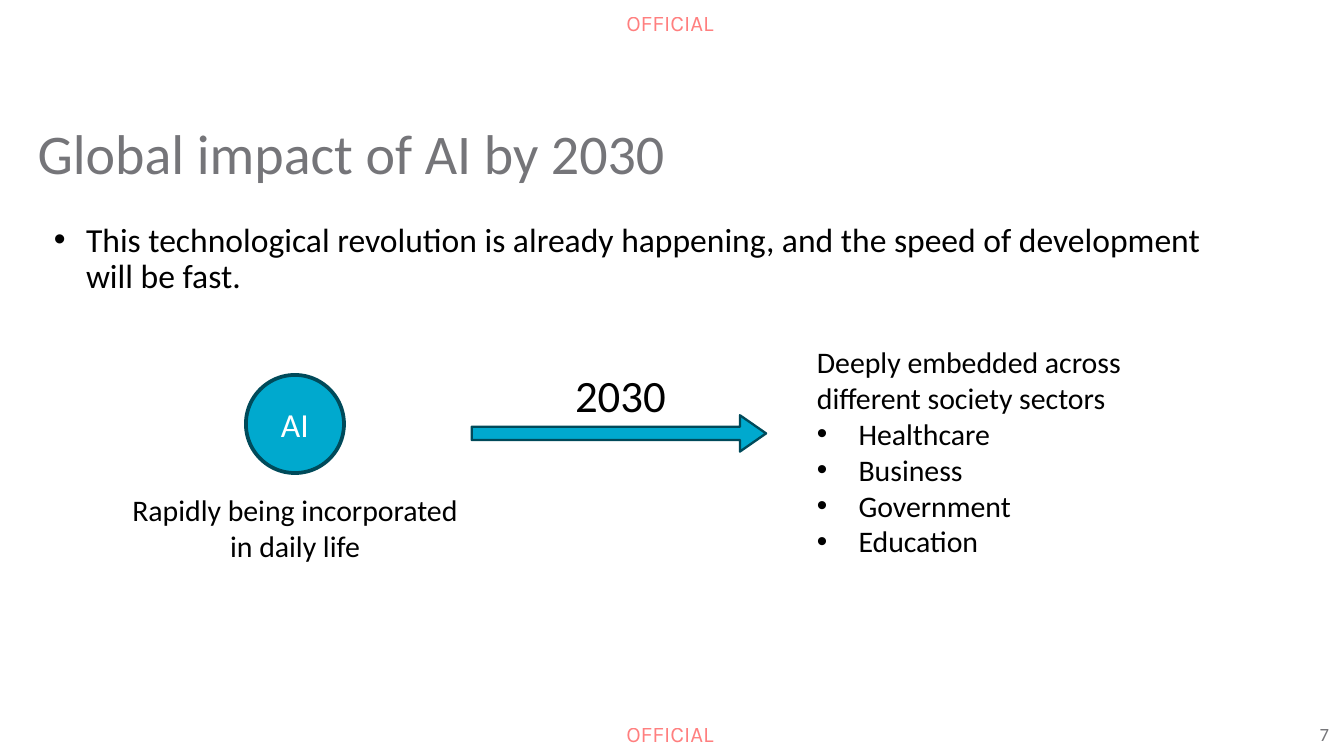
"""Build the slide on the global impact of AI by 2030."""
from dataclasses import dataclass

from lxml import etree
from pptx import Presentation
from pptx import util as u
from pptx.dml.color import RGBColor
from pptx.enum import shapes, text
from pptx.oxml.ns import qn

WIDTH = 10
HEIGHT = WIDTH * 9 / 16
COLORS = {
    "black": "000000",
    "white": "FFFFFF",
    "grey": "757579",
    "teal": "00A9CE",
    "dark_teal": "004A5A",
    "red": "FF0000",
}


@dataclass
class Style:
    """Font and paragraph settings of a text."""
    size: float
    color: str = "black"
    font: str = "Calibri"
    align: text.PP_ALIGN = text.PP_ALIGN.LEFT
    spacing: float = 1.0
    indent: float = 0
    opacity: int = 100


@dataclass
class Label:
    """A text box with its place, lines and style."""
    place: tuple[float, float, float, float]
    lines: list[str]
    style: Style
    margins: tuple[float, float] = (0.1, 0.05)
    wrap: bool = True
    bullets_from: int = 99


@dataclass
class Block:
    """A filled and outlined preset shape."""
    kind: shapes.MSO_SHAPE
    place: tuple[float, float, float, float]
    line_width: float
    adjustments: tuple[float, ...] = ()


MARKING = Style(12, "red", "Karla", opacity=50)
NOTE = Style(16, indent=0.31)
CENTRED_NOTE = Style(16, align=text.PP_ALIGN.CENTER)
TITLE = Label((0.28, 0.88, 9.45, 0.7), ["Global impact of AI by 2030"],
              Style(30, "grey"), (0, 0))
BODY = Label(
    (0.4, 1.66, 8.65, 0.77),
    ["This technological revolution is already happening, "
     "and the speed of development will be fast."],
    Style(18, spacing=0.9, indent=0.24), (0, 0), bullets_from=0)
LABELS = [
    *(Label((4.66, top, 0.71, 0.2), ["OFFICIAL"], MARKING, (0, 0), False)
      for top in (0.07, 5.36)),
    Label((9.72, 5.33, 0.28, 0.27), ["7"], Style(10, "grey"), wrap=False),
    Label((4.18, 2.69, 0.92, 0.5), ["2030"], Style(24)),
    Label((0.79, 3.61, 2.81, 0.64),
          ["Rapidly being incorporated in daily life"], CENTRED_NOTE),
    Label((5.98, 2.51, 2.81, 1.72),
          ["Deeply embedded across different society sectors",
           "Healthcare", "Business", "Government", "Education"],
          NOTE, bullets_from=1),
]
CIRCLE = Block(shapes.MSO_SHAPE.OVAL, (1.83, 2.79, 0.73, 0.73), 2)
ARROW = Block(shapes.MSO_SHAPE.RIGHT_ARROW, (3.51, 3.09, 2.19, 0.27), 1.25,
              (0.37, 0.72))


def rgb(name: str) -> RGBColor:
    """Return a named colour."""
    return RGBColor.from_string(COLORS[name])


def inches(place: tuple[float, ...]) -> list[u.Length]:
    """Turn numbers into lengths."""
    return [u.Inches(value) for value in place]


def set_bullet(para, indent: float) -> None:
    """Give a paragraph a round bullet with a hanging indent."""
    properties = para._p.get_or_add_pPr()
    properties.set("marL", str(u.Inches(indent)))
    properties.set("indent", str(-u.Inches(indent)))
    etree.SubElement(properties, qn("a:buFont"), typeface="Arial")
    etree.SubElement(properties, qn("a:buChar"), char="•")


def style_para(para, style: Style) -> None:
    """Apply a style to a paragraph and its runs."""
    para.alignment = style.align
    para.line_spacing = style.spacing
    para.space_before = u.Pt(0)
    for span in para.runs:
        span.font.size = u.Pt(style.size)
        span.font.name = style.font
        span.font.color.rgb = rgb(style.color)
        if style.opacity < 100:
            color = span._r.rPr.find(".//" + qn("a:srgbClr"))
            etree.SubElement(color, qn("a:alpha"), val=str(style.opacity * 1000))


def fill_label(box, label: Label) -> None:
    """Place a text box or placeholder and write its text."""
    box.left, box.top, box.width, box.height = inches(label.place)
    frame = box.text_frame
    frame.auto_size = text.MSO_AUTO_SIZE.NONE
    frame.word_wrap = label.wrap
    frame.vertical_anchor = text.MSO_ANCHOR.TOP
    side, end = inches(label.margins)
    frame.margin_left = frame.margin_right = side
    frame.margin_top = frame.margin_bottom = end
    frame.text = "\n".join(label.lines)
    for number, para in enumerate(frame.paragraphs):
        if number >= label.bullets_from:
            set_bullet(para, label.style.indent)
        style_para(para, label.style)


def add_block(page, block: Block):
    """Draw a teal shape and return it."""
    shape = page.shapes.add_shape(block.kind, *inches(block.place))
    shape.shadow.inherit = False
    shape.fill.solid()
    shape.fill.fore_color.rgb = rgb("teal")
    shape.line.color.rgb = rgb("dark_teal")
    shape.line.width = u.Pt(block.line_width)
    for number, value in enumerate(block.adjustments):
        shape.adjustments[number] = value
    return shape


def main() -> None:
    """Build and save the deck."""
    deck = Presentation()
    deck.slide_width, deck.slide_height = inches((WIDTH, HEIGHT))
    page = deck.slides.add_slide(deck.slide_layouts[1])
    fill_label(page.shapes.title, TITLE)
    fill_label(page.placeholders[1], BODY)

    circle = add_block(page, CIRCLE)
    circle.text_frame.text = "AI"
    circle.text_frame.vertical_anchor = text.MSO_ANCHOR.MIDDLE
    style_para(circle.text_frame.paragraphs[0],
               Style(18, "white", align=text.PP_ALIGN.CENTER))
    add_block(page, ARROW)

    for label in LABELS:
        fill_label(page.shapes.add_textbox(*inches(label.place)), label)
    deck.save("out.pptx")


if __name__ == "__main__":
    main()
